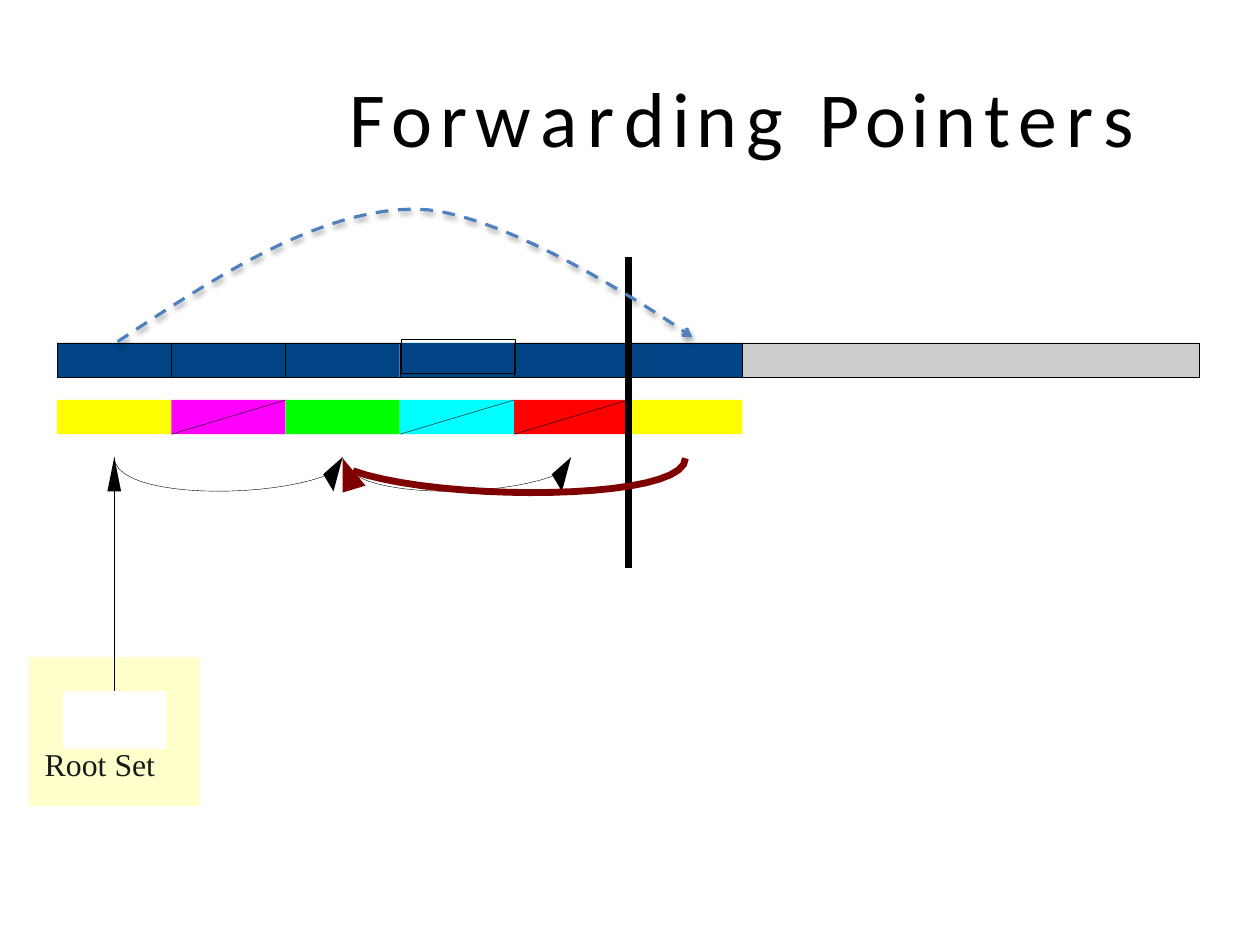
from dataclasses import dataclass
from typing import Optional

from lxml.etree import SubElement
from pptx import Presentation
from pptx.dml.color import RGBColor
from pptx.enum.dml import MSO_LINE_DASH_STYLE as DASH
from pptx.enum.shapes import MSO_CONNECTOR_TYPE as CONNECTOR, MSO_SHAPE as SHAPE
from pptx.enum.text import MSO_ANCHOR, PP_ALIGN
from pptx.oxml.ns import qn
from pptx.util import Cm, Pt

BLACK = RGBColor(0x00, 0x00, 0x00)
WHITE = RGBColor(0xFF, 0xFF, 0xFF)
GRAY = RGBColor(0xCC, 0xCC, 0xCC)
NAVY = RGBColor(0x00, 0x44, 0x85)
YELLOW = RGBColor(0xFF, 0xFF, 0x00)
MAGENTA = RGBColor(0xFF, 0x00, 0xFF)
GREEN = RGBColor(0x00, 0xFF, 0x00)
CYAN = RGBColor(0x00, 0xFF, 0xFF)
RED = RGBColor(0xFF, 0x00, 0x00)
MAROON = RGBColor(0x7F, 0x00, 0x00)
BLUE = RGBColor(0x4F, 0x81, 0xBD)
CREAM = RGBColor(0xFF, 0xFF, 0xCC)
INK = RGBColor(0x19, 0x19, 0x19)

UNIT = 2.54  # centimetres per heap slot
LEFT, HEAP_TOP, COLOR_TOP, BAR_H = 0.5, 3, 3.5, 0.3
HAIR, THICK = 0.25, 4.3
Point = tuple[float, float]


@dataclass
class Slot:
    color: RGBColor
    x: float
    width: float = 1
    dead: bool = False
    shift: Point = (0, 0)


@dataclass
class Pointer:
    curve: list[Point]
    head: list[Point]
    color: RGBColor
    weight: float


SLOTS = [
    Slot(YELLOW, LEFT),
    Slot(MAGENTA, LEFT + 1, dead=True),
    Slot(GREEN, LEFT + 2),
    Slot(CYAN, LEFT + 3, dead=True, shift=(0.01, -0.03)),
    Slot(RED, LEFT + 4, 0.97, dead=True),
    Slot(YELLOW, LEFT + 5.03, 0.97),
]


def u(value: float) -> Cm:
    return Cm(value * UNIT)


def style(s, fill: Optional[RGBColor], line: Optional[RGBColor], weight: float = HAIR) -> None:
    s.shadow.inherit = False
    if fill is None:
        s.fill.background()
    else:
        s.fill.solid()
        s.fill.fore_color.rgb = fill
    if line is None:
        s.line.fill.background()
    else:
        s.line.color.rgb = line
        s.line.width = Pt(weight)


def bar(x: float, y: float, w: float, fill: Optional[RGBColor] = None,
        line: Optional[RGBColor] = None) -> None:
    style(sp.add_shape(SHAPE.RECTANGLE, u(x), u(y), u(w), u(BAR_H)), fill, line)


def straight(a: Point, b: Point, weight: float = HAIR) -> None:
    c = sp.add_connector(CONNECTOR.STRAIGHT, u(a[0]), u(a[1]), u(b[0]), u(b[1]))
    c.line.color.rgb = BLACK
    c.line.width = Pt(weight)
    SubElement(c._element.spPr, qn("a:effectLst"))


def outline(points: list[Point], closed: bool = False):
    start, *rest = [(u(x), u(y)) for x, y in points]
    builder = sp.build_freeform(*start, scale=1.0)
    builder.add_line_segments(rest, close=closed)
    return builder.convert_to_shape()


def bezier(p0: Point, p1: Point, p2: Point, p3: Point, steps: int = 20) -> list[Point]:
    def at(t: float, k: int) -> float:
        v = 1 - t
        return v**3 * p0[k] + 3 * v * v * t * p1[k] + 3 * v * t * t * p2[k] + t**3 * p3[k]
    return [(at(i / steps, 0), at(i / steps, 1)) for i in range(steps + 1)]


def reference(x: float) -> Pointer:
    curve = bezier((x, 4), (x, 4.37), (x + 1.4, 4.37), (x + 1.9, 4.14))
    return Pointer(curve, [(x + 2, 4), (x + 1.83, 4.15), (x + 1.92, 4.3)], BLACK, HAIR)


def add_runs(p, parts: list[tuple[str, float]], font: str, size: float, color: RGBColor) -> None:
    for text, spacing in parts:
        r = p.add_run()
        r.text = text
        r.font.name, r.font.size = font, Pt(size)
        r.font.color.rgb = color
        r._r.get_or_add_rPr().set("spc", str(round(spacing * 100)))


def stem_border(cell, side: str) -> None:
    tc_pr = cell._tc.get_or_add_tcPr()
    ln = tc_pr.makeelement(qn(f"a:{side}"), {"w": str(Pt(0.1))})
    fill = SubElement(ln, qn("a:solidFill"))
    SubElement(fill, qn("a:srgbClr"), val=str(BLACK))
    tc_pr.insert(0, ln)


prs = Presentation()
prs.slide_width, prs.slide_height = u(11.03), u(8.26)
slide = prs.slides.add_slide(prs.slide_layouts[6])
sp = slide.shapes

# Title
tf = sp.add_textbox(u(0.55), u(0.61), u(9.93), u(0.82)).text_frame
tf.word_wrap = True
tf.vertical_anchor = MSO_ANCHOR.MIDDLE
tf.margin_left = tf.margin_right = tf.margin_top = tf.margin_bottom = 0
p = tf.paragraphs[0]
p.alignment = PP_ALIGN.CENTER
p._p.get_or_add_pPr().set("marL", str(u(1.96)))
add_runs(p, [("F", 3.5), ("or", 5.2), ("w", 5.7), ("a", 6.6), ("r", 6.2), ("di", 4.2),
             ("n", 5.4), ("g ", 6.2), ("P", 3.3), ("oi", 3.7), ("n", 4.7), ("ter", 6),
             ("s", 5.3)], "Calibri", 49, BLACK)

# Heap halves, then the slots with their colour keys
bar(6.5, HEAP_TOP, 4, fill=GRAY)
for half in (LEFT + 5, LEFT):
    bar(half, HEAP_TOP, 5, line=BLACK)
for slot in SLOTS:
    bar(slot.x, HEAP_TOP, slot.width, fill=NAVY)
    bar(slot.x, COLOR_TOP, slot.width, fill=slot.color)
for i, slot in enumerate(SLOTS):
    x = LEFT + i
    bar(x + slot.shift[0], HEAP_TOP + slot.shift[1], 1, line=BLACK)
    if slot.dead:
        straight((x, COLOR_TOP + BAR_H), (x + 1, COLOR_TOP))

# Divider between the halves
straight((5.5, 2.25), (5.5, 4.97), THICK)

# Pointers between objects
moved = Pointer(bezier((6, 4.01), (6, 4.39), (3.85, 4.39), (3.09, 4.12)),
                [(3, 4.01), (3, 4.31), (3.2, 4.25)], MAROON, THICK)
for pointer in (reference(3), reference(1), moved):
    style(outline(pointer.curve), None, pointer.color, pointer.weight)
    style(outline(pointer.head, closed=True), pointer.color, None)
style(outline([(1, 4), (0.94, 4.3), (1.06, 4.3)], closed=True), BLACK, None)

# Root set table; the border between its halves is the stem of the root pointer
widths, heights = [0.3, 0.45, 0.45, 0.3], [1.58, 0.3, 0.5, 0.5]
table = sp.add_table(4, 4, u(0.25), u(4.17), u(1.5), u(2.88)).table
table.first_row = table.horz_banding = False
table._tbl.tblPr.find(qn("a:tableStyleId")).text = "{2D5ABB26-0587-4C30-8999-92F81FD0307C}"
for column, width in zip(table.columns, widths):
    column.width = u(width)
for r_index, height in enumerate(heights):
    table.rows[r_index].height = u(height)
    for c_index in range(4):
        cell = table.cell(r_index, c_index)
        cell.margin_left = cell.margin_right = cell.margin_top = cell.margin_bottom = 0
        if r_index == 0:
            cell.fill.background()
        else:
            cell.fill.solid()
            cell.fill.fore_color.rgb = WHITE if r_index == 2 and c_index in (1, 2) else CREAM
        if r_index < 2:
            stem_border(cell, "lnR" if c_index < 2 else "lnL") if c_index in (0, 1, 2) else None
        cell.text_frame.paragraphs[0]._p.get_or_add_endParaRPr().set("sz", "1000")
for row, first, last in [(0, 0, 1), (0, 2, 3), (1, 0, 1), (1, 2, 3), (2, 1, 2), (3, 0, 3)]:
    table.cell(row, first).merge(table.cell(row, last))
p = table.cell(3, 0).text_frame.paragraphs[0]
p._p.get_or_add_pPr().set("marL", str(u(0.14)))
add_runs(p, [("R", 0), ("o", 0.1), ("ot ", 0), ("Se", -0.1), ("t", 0)],
         "Times New Roman", 20, INK)

# Dashed forwarding arrow with a soft shadow
arc = bezier((1.03, 2.99), (1.91, 2.41), (2.78, 1.84), (3.62, 1.83))
arc += bezier((3.62, 1.83), (4.46, 1.82), (6.06, 2.95), (6.06, 2.95))[1:]
s = outline(arc)
style(s, None, BLUE, 2)
s.line.dash_style = DASH.DASH
SubElement(s.line._get_or_add_ln(), qn("a:tailEnd"), type="arrow")
shadow = SubElement(s._element.spPr.find(qn("a:effectLst")), qn("a:outerShdw"),
                    blurRad=str(Pt(3.1)), dist=str(Pt(1.6)), dir="5400000", rotWithShape="0")
tint = SubElement(shadow, qn("a:srgbClr"), val=str(BLACK))
SubElement(tint, qn("a:alpha"), val="38000")

prs.save("out.pptx")
